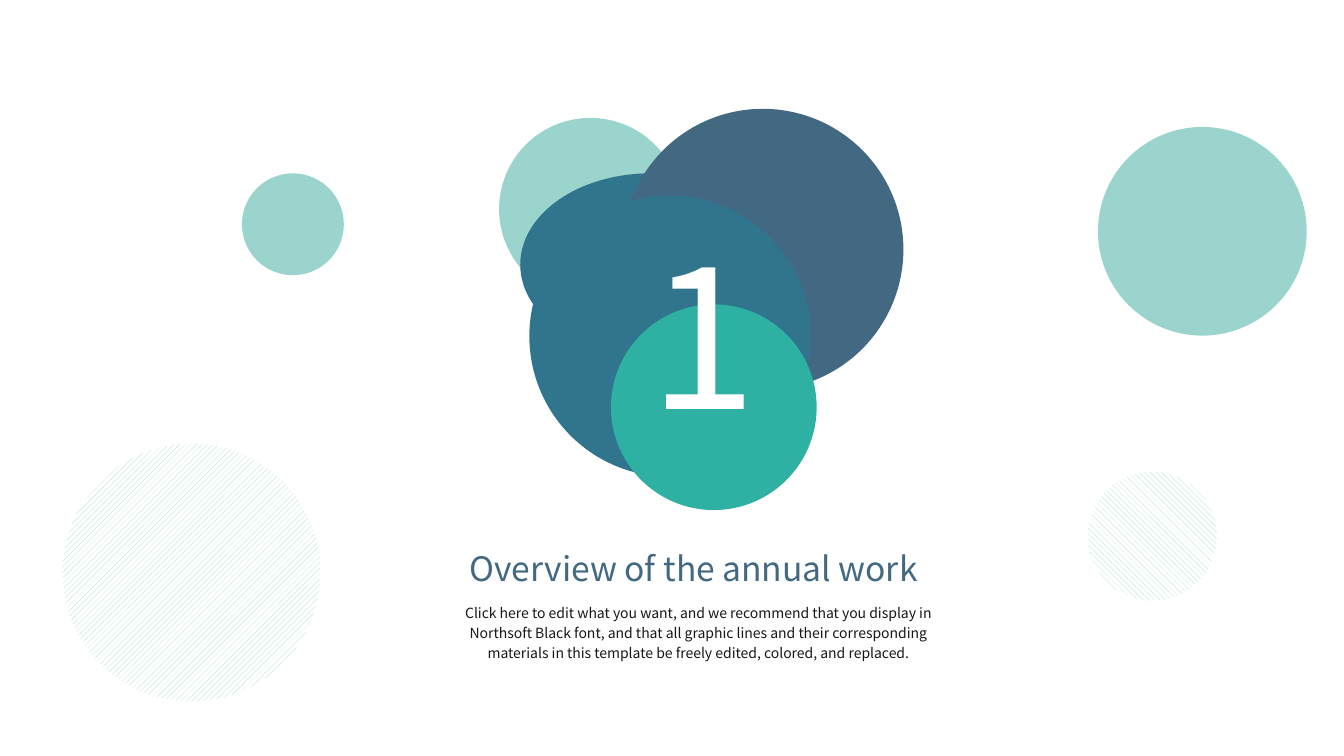
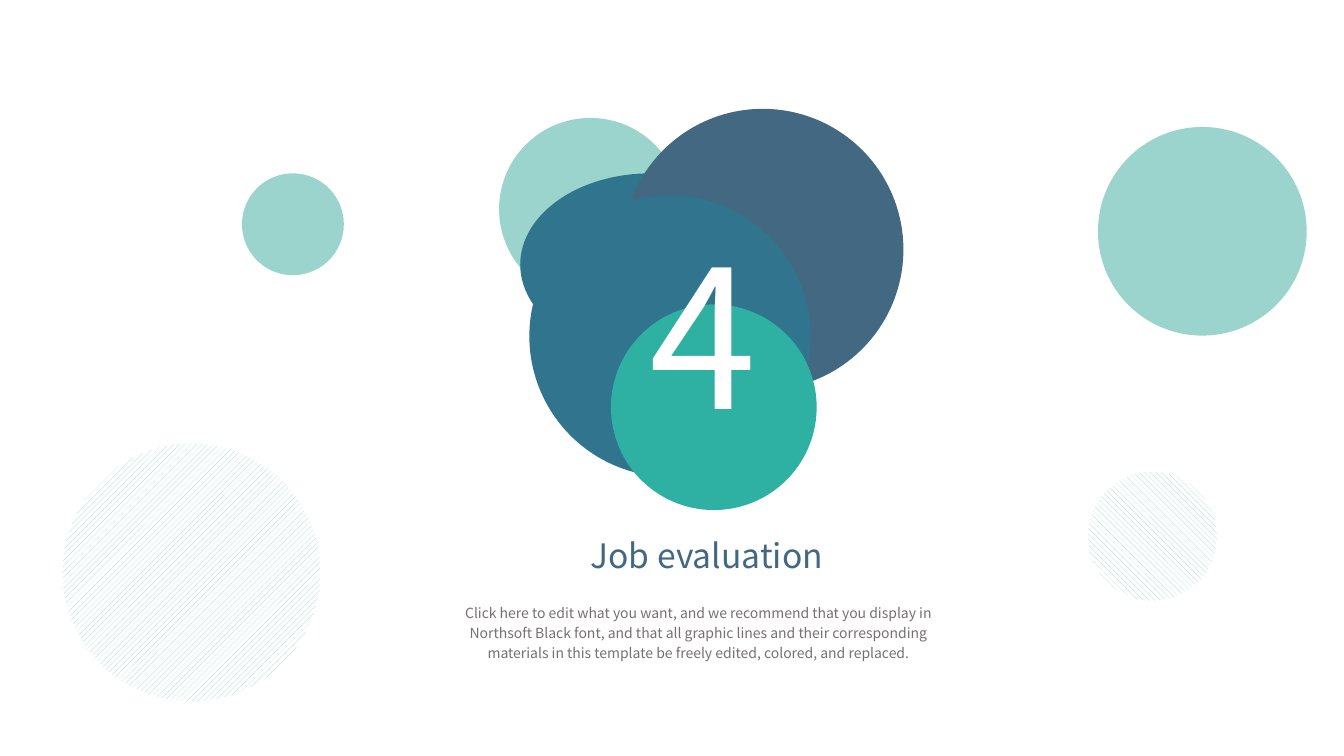
import pptx
import pptx.util
import pptx.dml.color
import pptx.enum.dml
import pptx.enum.shapes
import pptx.enum.text

Inches = pptx.util.Inches
Pt = pptx.util.Pt
PATTERN = pptx.enum.dml.MSO_PATTERN
ALIGN = pptx.enum.text.PP_ALIGN

FONT = "Noto Sans CJK SC"
COLORS = {
    "mint": "9BD4CC",
    "blue": "30748D",
    "slate": "436982",
    "teal": "2EB0A2",
    "white": "FFFFFF",
    "ink": "181717",
    "gray": "767171",
}
CLUSTER = [
    (4.95, 1.17, 1.81, 1.81, "mint"),
    (5.16, 1.72, 2.58, 1.81, "blue"),
    (6.17, 1.08, 2.79, 2.79, "slate"),
    (5.25, 1.94, 2.79, 2.79, "blue"),
    (6.06, 3.02, 2.04, 2.04, "teal"),
]
PLAIN_BUBBLES = [(10.89, 1.26, 2.07), (2.4, 1.72, 1.01)]
HATCHED_BUBBLES = [
    (0.62, 4.4, 2.56, PATTERN.WIDE_UPWARD_DIAGONAL),
    (10.79, 4.68, 1.28, PATTERN.WIDE_DOWNWARD_DIAGONAL),
]
SUMMARY = (
    "Click here to edit what you want, and we recommend that you display in "
    "Northsoft Black font, and that all graphic lines and their corresponding "
    "materials in this template be freely edited, colored, and replaced."
)
SECTIONS = [
    {"number": "1", "heading": "Overview of the annual work",
     "heading_box": (4.49, 5.4, 4.78, 0.48), "summary_color": "ink"},
    {"number": "4", "heading": "Job evaluation",
     "heading_box": (5.77, 5.27, 2.48, 0.48), "summary_color": "gray"},
]


def rgb(name):
    return pptx.dml.color.RGBColor.from_string(COLORS[name])


def add_ellipse(shapes, left, top, width, height, color, pattern=None):
    ellipse = shapes.add_shape(
        pptx.enum.shapes.MSO_SHAPE.OVAL,
        Inches(left), Inches(top), Inches(width), Inches(height))
    ellipse.shadow.inherit = False
    ellipse.line.fill.background()
    if pattern is None:
        ellipse.fill.solid()
        ellipse.fill.fore_color.rgb = rgb(color)
    else:
        ellipse.fill.patterned()
        ellipse.fill.pattern = pattern
        ellipse.fill.fore_color.rgb = rgb(color)
        ellipse.fill.back_color.rgb = rgb("white")


def write_text(holder, text, *, size, color, align=ALIGN.LEFT, wrap=False,
               insets=(0.1, 0.05), line_spacing=1.0, space_before=0):
    frame = holder.text_frame
    frame.word_wrap = wrap
    frame.auto_size = pptx.enum.text.MSO_AUTO_SIZE.SHAPE_TO_FIT_TEXT
    frame.vertical_anchor = pptx.enum.text.MSO_ANCHOR.TOP
    frame.margin_left = frame.margin_right = Inches(insets[0])
    frame.margin_top = frame.margin_bottom = Inches(insets[1])
    paragraph = frame.paragraphs[0]
    paragraph.alignment = align
    paragraph.line_spacing = line_spacing
    paragraph.space_before = Pt(space_before)
    run = paragraph.add_run()
    run.text = text
    run.font.name = FONT
    run.font.size = Pt(size)
    run.font.color.rgb = rgb(color)


def add_text(slide, box, text, **style):
    holder = slide.shapes.add_textbox(*map(Inches, box))
    write_text(holder, text, **style)


def set_title(slide, box, text):
    title = slide.shapes.title
    title.left, title.top, title.width, title.height = map(Inches, box)
    write_text(title, text, size=24, color="slate", align=ALIGN.CENTER,
               insets=(0.07, 0.04))


def add_bubbles(slide):
    for left, top, size in PLAIN_BUBBLES:
        add_ellipse(slide.shapes, left, top, size, size, "mint")
    for left, top, size, pattern in HATCHED_BUBBLES:
        add_ellipse(slide.shapes, left, top, size, size, "mint", pattern)
    cluster = slide.shapes.add_group_shape()
    for ellipse in CLUSTER:
        add_ellipse(cluster.shapes, *ellipse)


def add_section(deck, number, heading, heading_box, summary_color):
    slide = deck.slides.add_slide(deck.slide_layouts[5])
    set_title(slide, heading_box, heading)
    add_bubbles(slide)
    add_text(slide, (6.34, 2.1, 1.34, 2.42), number, size=138, color="white")
    add_text(slide, (4.39, 5.96, 5.07, 0.39), SUMMARY, size=10,
             color=summary_color, align=ALIGN.CENTER, wrap=True,
             insets=(0, 0), line_spacing=1.2, space_before=2)


def main():
    deck = pptx.Presentation()
    deck.slide_width = Inches(13.33)
    deck.slide_height = Inches(7.5)
    for section in SECTIONS:
        add_section(deck, **section)
    deck.save("out.pptx")


if __name__ == "__main__":
    main()
